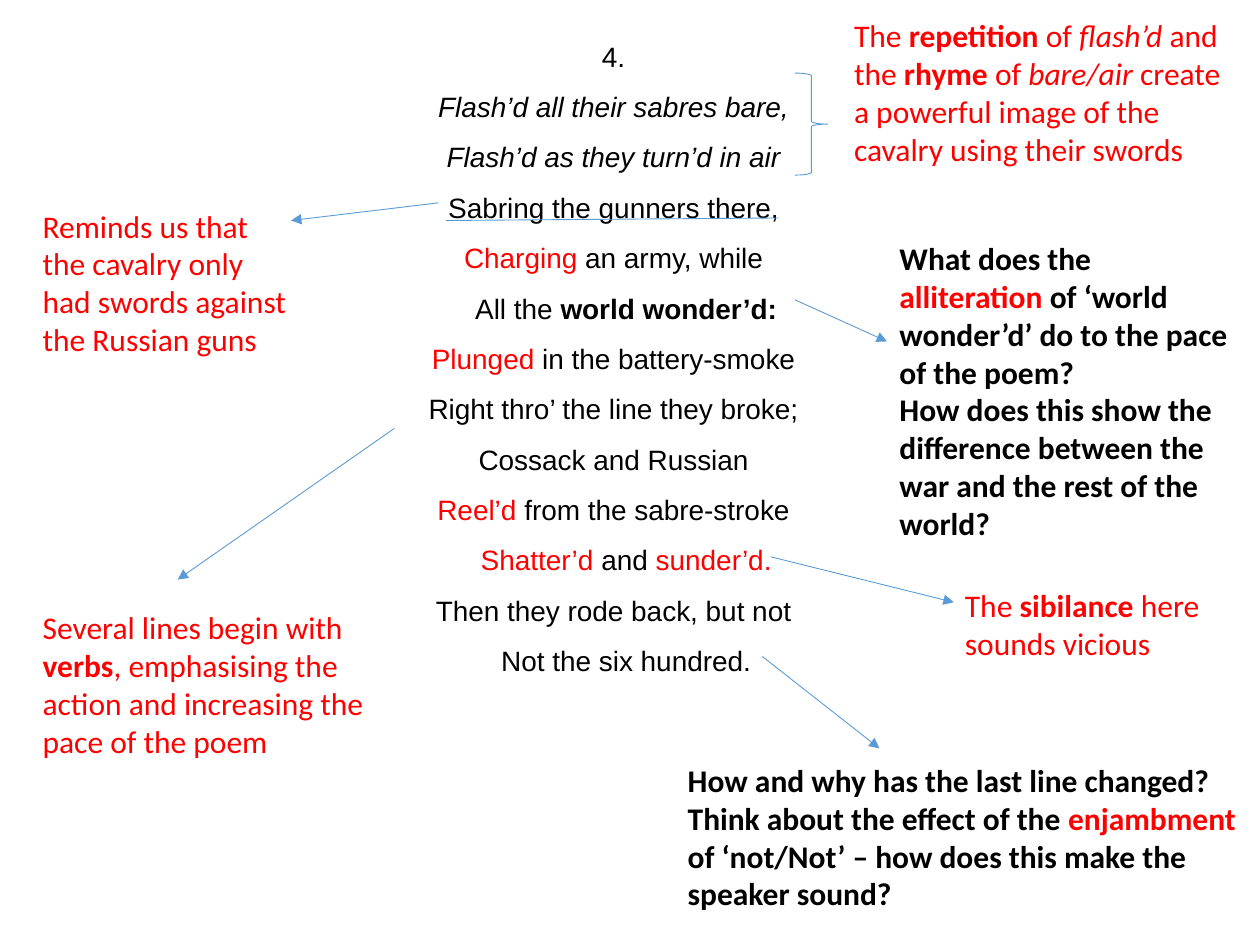
import pptx
import pptx.dml.color
import pptx.enum.shapes
import pptx.enum.text
import pptx.oxml.ns
import pptx.util
from lxml import etree

PX = 9144  # 100 px to the inch
COLOURS = {"text": "000000", "accent": "FF0000", "line": "5B9BD5"}
LINE_WIDTH = pptx.util.Pt(0.5)

# Run styles: colour name and font flags
STYLES = {
    "plain": ("text", {}),
    "italic": ("text", {"italic": True}),
    "bold": ("text", {"bold": True}),
    "red": ("accent", {}),
    "red italic": ("accent", {"italic": True}),
    "red bold": ("accent", {"bold": True}),
}
POEM_FONT = {"name": "Arial", "size": pptx.util.Pt(16)}
NOTE_FONT = {"name": "Calibri", "size": pptx.util.Pt(18)}
VERSE_FORMAT = {"alignment": pptx.enum.text.PP_ALIGN.CENTER, "line_spacing": 1.5}
FRAME_FORMAT = {
    "word_wrap": True,
    "auto_size": pptx.enum.text.MSO_AUTO_SIZE.SHAPE_TO_FIT_TEXT,
}
VERSE_INDENT = 20

# Each verse: indent, then its runs
POEM = [
    (0, [("4.", "plain")]),
    (0, [("Flash’d all their sabres bare,", "italic")]),
    (0, [("Flash’d as they turn’d in air", "italic")]),
    (0, [("Sabring the gunners there,", "plain")]),
    (0, [("Charging ", "red"), ("an army, while", "plain")]),
    (VERSE_INDENT, [("All the ", "plain"), ("world wonder’d:", "bold")]),
    (0, [("Plunged ", "red"), ("in the battery-smoke", "plain")]),
    (0, [("Right thro’ the line they broke;", "plain")]),
    (0, [("Cossack and Russian", "plain")]),
    (0, [("Reel’d ", "red"), ("from the sabre-stroke", "plain")]),
    (VERSE_INDENT, [("Shatter’d ", "red"), ("and ", "plain"), ("sunder’d.", "red")]),
    (0, [("Then they rode back, but not", "plain")]),
    (VERSE_INDENT, [("Not the six hundred.", "plain")]),
]

# Each note: left, top, width, height, then its paragraphs of runs
NOTES = [
    ((704, 185, 288, 283), [
        [("What does the ", "bold"), ("alliteration", "red bold"),
         (" of ‘world wonder’d’ do to the pace of the poem?", "bold")],
        [("How does this show the difference between the war and the rest "
          "of the world?", "bold")],
    ]),
    ((536, 599, 456, 131), [
        [("How and why has the last line changed?", "bold")],
        [("Think about the effect of the ", "bold"), ("enjambment", "red bold"),
         (" of ‘not/Not’ – how does this make the speaker sound?", "bold")],
    ]),
    ((668, 8, 325, 131), [
        [("The ", "red"), ("repetition", "red bold"), (" of ", "red"),
         ("flash’d ", "red italic"), ("and the ", "red"), ("rhyme ", "red bold"),
         ("of ", "red"), ("bare/air", "red italic"),
         (" create a powerful image of the cavalry using their swords", "red")],
    ]),
    ((24, 159, 213, 162), [
        [("Reminds us that the cavalry only had swords against the Russian guns",
          "red")],
    ]),
    ((24, 478, 290, 131), [
        [("Several lines begin with ", "red"), ("verbs", "red bold"),
         (", emphasising the action and increasing the pace of the poem", "red")],
    ]),
    ((756, 460, 224, 71), [
        [("The ", "red"), ("sibilance", "red bold"),
         (" here sounds vicious", "red")],
    ]),
]

# Arrows from verse to note: x1, y1, x2, y2
ARROWS = [
    (631, 238, 704, 271),
    (605, 521, 698, 594),
    (348, 161, 231, 175),
    (313, 340, 141, 460),
    (612, 442, 757, 478),
]
SABRING_UNDERLINE = (354, 175, 618, 173)
FLASHD_BRACE = (631, 58, 26, 81)


def emu(lengths):
    return [length * PX for length in lengths]


def rgb(name):
    return pptx.dml.color.RGBColor.from_string(COLOURS[name])


def apply(target, values):
    for attribute, value in values.items():
        setattr(target, attribute, value)


def add_frame(slide, box):
    frame = slide.shapes.add_textbox(*emu(box)).text_frame
    apply(frame, FRAME_FORMAT)
    return frame


def write_paragraph(frame, index, runs, font):
    paragraph = frame.add_paragraph() if index else frame.paragraphs[0]
    for words, style in runs:
        colour, flags = STYLES[style]
        run = paragraph.add_run()
        run.text = words
        apply(run.font, {**font, **flags})
        run.font.color.rgb = rgb(colour)
    return paragraph


def add_poem(slide, box):
    frame = add_frame(slide, box)
    for index, (indent, runs) in enumerate(POEM):
        verse = write_paragraph(frame, index, runs, POEM_FONT)
        apply(verse, VERSE_FORMAT)
        if indent:
            verse._p.get_or_add_pPr().set("marL", str(indent * PX))


def add_note(slide, box, paragraphs):
    frame = add_frame(slide, box)
    for index, runs in enumerate(paragraphs):
        write_paragraph(frame, index, runs, NOTE_FONT)


def style_line(line):
    line.color.rgb = rgb("line")
    line.width = LINE_WIDTH


def add_line(slide, ends, arrow=False):
    connector = slide.shapes.add_connector(
        pptx.enum.shapes.MSO_CONNECTOR.STRAIGHT, *emu(ends))
    style_line(connector.line)
    qn = pptx.oxml.ns.qn
    if arrow:
        outline = connector.line._get_or_add_ln()
        etree.SubElement(outline, qn("a:tailEnd"), type="triangle")
    etree.SubElement(connector._element.spPr, qn("a:effectLst"))


def add_brace(slide, box):
    brace = slide.shapes.add_shape(
        pptx.enum.shapes.MSO_SHAPE.RIGHT_BRACE, *emu(box))
    brace.shadow.inherit = False
    brace.fill.background()
    style_line(brace.line)


def main():
    presentation = pptx.Presentation()
    apply(presentation, {"slide_width": 1000 * PX, "slide_height": 750 * PX})
    slide = presentation.slides.add_slide(presentation.slide_layouts[6])

    # Poem in the middle
    add_poem(slide, (237, 13, 500, 550))

    # Notes around it
    for box, paragraphs in NOTES:
        add_note(slide, box, paragraphs)

    # Marks that tie notes to verses
    for ends in ARROWS:
        add_line(slide, ends, arrow=True)
    add_line(slide, SABRING_UNDERLINE)
    add_brace(slide, FLASHD_BRACE)

    presentation.save("out.pptx")


if __name__ == "__main__":
    main()
